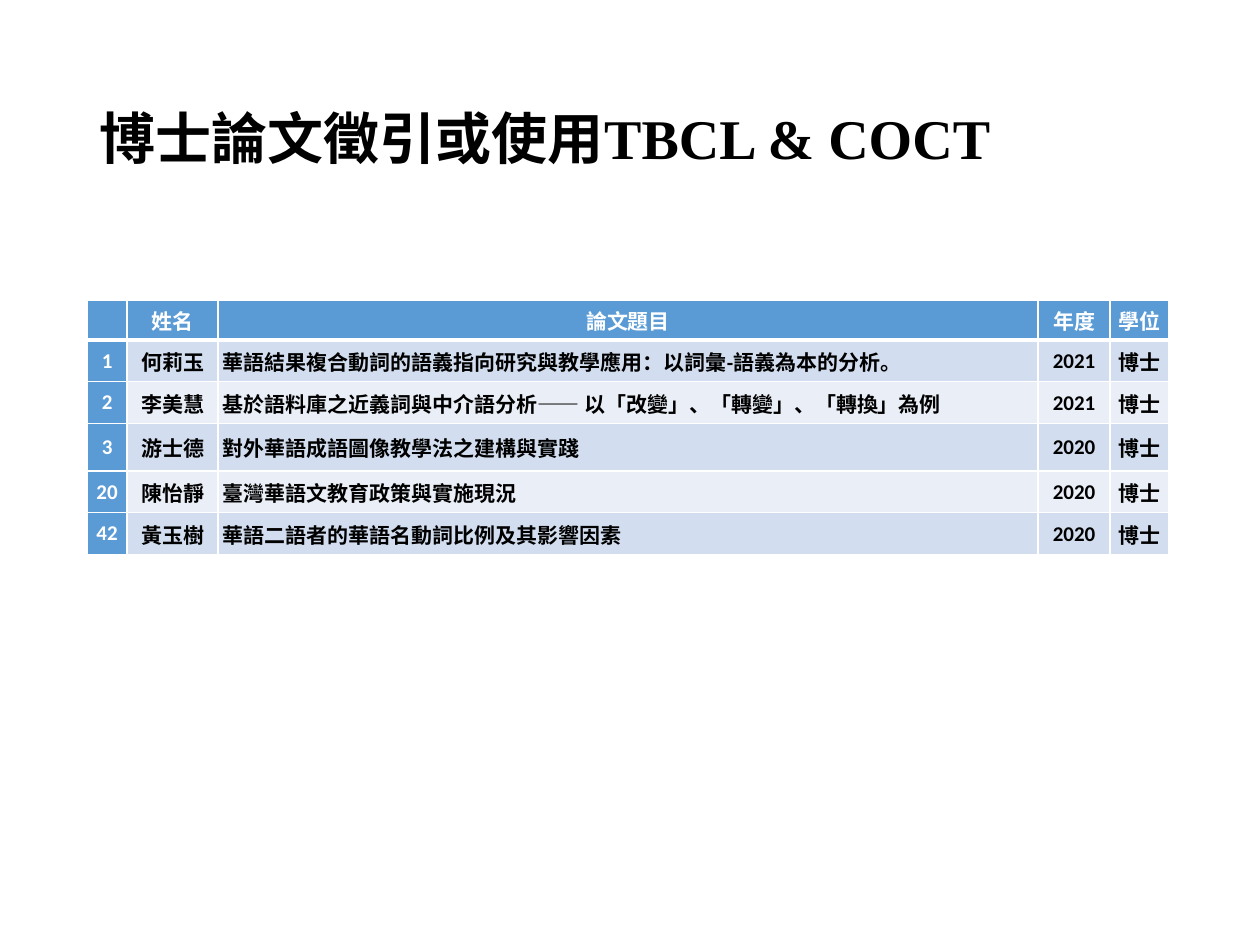
from dataclasses import dataclass

from lxml import etree
from pptx import Presentation
from pptx import util as u
from pptx.dml.color import RGBColor
from pptx.enum import text
from pptx.oxml import ns
from pptx.slide import Slide

BLACK = RGBColor(0x00, 0x00, 0x00)
WHITE = RGBColor(0xFF, 0xFF, 0xFF)
BLUE = RGBColor(0x5B, 0x9B, 0xD5)
BANDS = (RGBColor(0xD2, 0xDE, 0xEF), RGBColor(0xEA, 0xEF, 0xF7))

LEFT = 0.69
WIDTH = 8.59
TITLE_COLUMN = 2
COLUMN_WIDTHS = (0.32, 0.72, 6.51, 0.57, 0.47)
ROW_HEIGHTS = (0.32, 0.33, 0.33, 0.38, 0.33, 0.33)
THESES = (
    ("", "姓名", "論文題目", "年度", "學位"),
    ("1", "何莉玉", "華語結果複合動詞的語義指向研究與教學應用：以詞彙-語義為本的分析。", "2021", "博士"),
    ("2", "李美慧", "基於語料庫之近義詞與中介語分析—— 以「改變」、「轉變」、「轉換」為例", "2021", "博士"),
    ("3", "游士德", "對外華語成語圖像教學法之建構與實踐", "2020", "博士"),
    ("20", "陳怡靜", "臺灣華語文教育政策與實施現況", "2020", "博士"),
    ("42", "黃玉樹", "華語二語者的華語名動詞比例及其影響因素", "2020", "博士"),
)


@dataclass
class SlideBuilder:
    slide: Slide
    table_font: str = "Calibri"
    table_size: int = 12
    title_size: int = 32

    def format_font(self, font, size, color):
        font.size = u.Pt(size)
        font.bold = True
        font.color.rgb = color

    def add_title(self, runs, top, height):
        title = self.slide.shapes.title
        title.left, title.top = u.Inches(LEFT), u.Inches(top)
        title.width, title.height = u.Inches(WIDTH), u.Inches(height)
        frame = title.text_frame
        frame.auto_size = text.MSO_AUTO_SIZE.NONE
        frame.vertical_anchor = text.MSO_ANCHOR.MIDDLE
        paragraph = frame.paragraphs[0]
        paragraph.alignment = text.PP_ALIGN.LEFT
        paragraph.line_spacing = 0.9
        self.format_font(paragraph.font, self.title_size, BLACK)
        for wording, font_name in runs:
            run = paragraph.add_run()
            run.text = wording
            run.font.name = font_name

    def add_table(self, rows, top):
        frame = self.slide.shapes.add_table(
            len(rows), len(COLUMN_WIDTHS), u.Inches(LEFT), u.Inches(top),
            u.Inches(WIDTH), u.Inches(sum(ROW_HEIGHTS)))
        table = frame.table
        for column, width in zip(table.columns, COLUMN_WIDTHS):
            column.width = u.Inches(width)
        for row, height in zip(table.rows, ROW_HEIGHTS):
            row.height = u.Inches(height)
        for row_index, row in enumerate(rows):
            for column_index, wording in enumerate(row):
                cell = table.cell(row_index, column_index)
                self.format_cell(cell, wording, row_index, column_index)

    def format_cell(self, cell, wording, row_index, column_index):
        is_heading = row_index == 0 or column_index == 0
        self.add_borders(cell, row_index)
        cell.fill.solid()
        cell.fill.fore_color.rgb = BLUE if is_heading else BANDS[(row_index - 1) % 2]
        cell.vertical_anchor = text.MSO_ANCHOR.MIDDLE
        cell.margin_left = cell.margin_right = u.Inches(0.04 if column_index else 0)
        cell.margin_top = u.Inches(0.01 if column_index else 0)
        cell.margin_bottom = 0
        cell.text = wording
        paragraph = cell.text_frame.paragraphs[0]
        is_thesis_title = row_index > 0 and column_index == TITLE_COLUMN
        paragraph.alignment = text.PP_ALIGN.LEFT if is_thesis_title else text.PP_ALIGN.CENTER
        paragraph.font.name = self.table_font
        self.format_font(paragraph.font, self.table_size, WHITE if is_heading else BLACK)

    def add_borders(self, cell, row_index):
        properties = cell._tc.get_or_add_tcPr()
        widths = {"lnL": 1, "lnR": 1,
                  "lnT": 3 if row_index == 1 else 1,
                  "lnB": 3 if row_index == 0 else 1}
        for side, width in widths.items():
            line = etree.SubElement(properties, ns.qn(f"a:{side}"), w=str(u.Pt(width)))
            fill = etree.SubElement(line, ns.qn("a:solidFill"))
            etree.SubElement(fill, ns.qn("a:srgbClr"), val=str(WHITE))


def main():
    presentation = Presentation()
    presentation.slide_width = u.Inches(10)
    presentation.slide_height = u.Inches(7.5)
    builder = SlideBuilder(presentation.slides.add_slide(presentation.slide_layouts[5]))
    builder.add_title(
        (("博士論文徵引或使用", "Arial"), ("TBCL & COCT", "Times New Roman")),
        top=0.4, height=1.45)
    builder.add_table(THESES, top=2.38)
    presentation.save("out.pptx")


if __name__ == "__main__":
    main()
